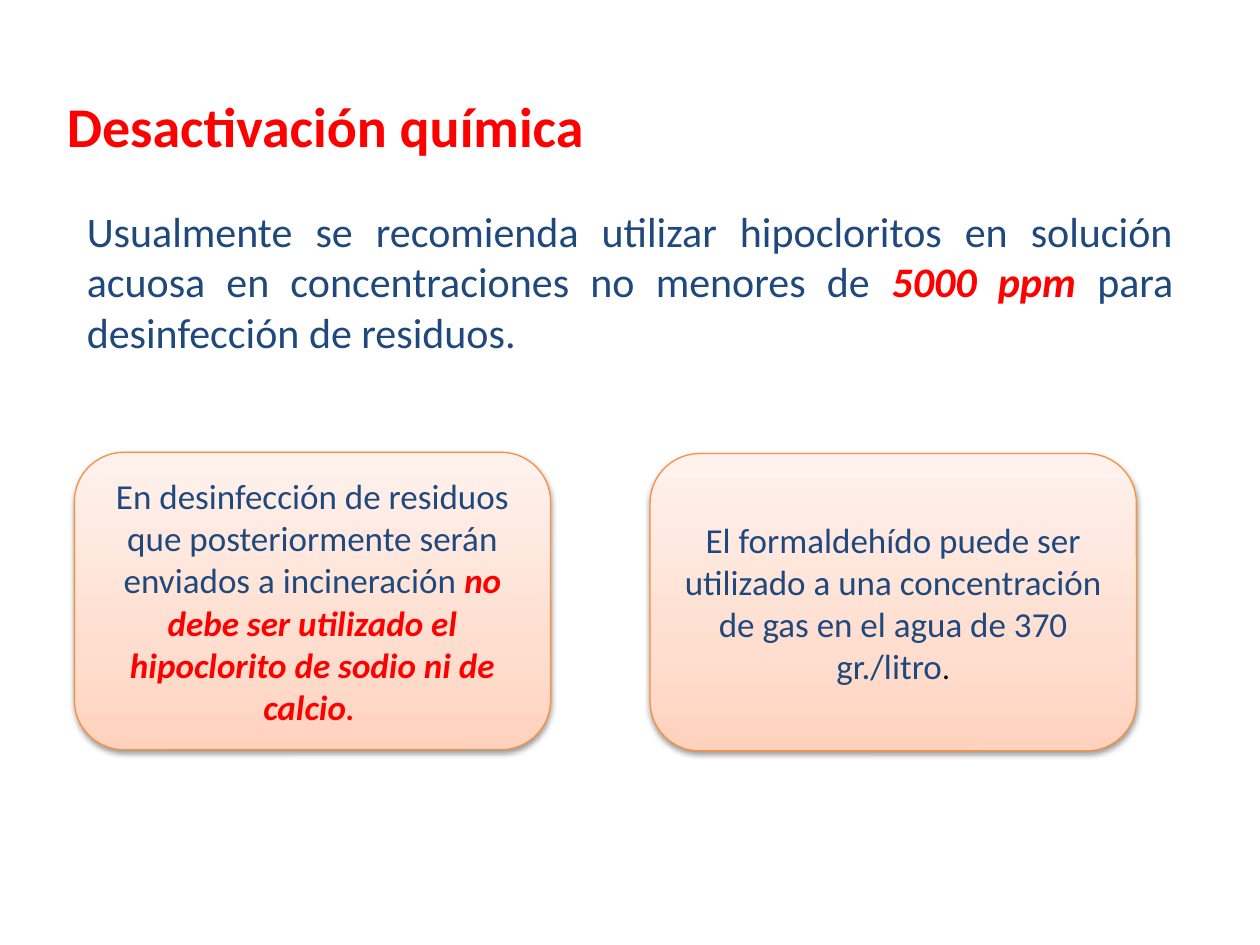
from copy import deepcopy
from dataclasses import dataclass

from lxml.etree import SubElement
from pptx import Presentation
from pptx.dml.color import RGBColor
from pptx.enum.shapes import MSO_SHAPE
from pptx.enum.text import MSO_ANCHOR as Anchor, MSO_AUTO_SIZE as AutoSize, PP_ALIGN as Align
from pptx.oxml.ns import qn
from pptx.util import Pt

PX = 9144


@dataclass(frozen=True)
class Theme:
    font: str = "Calibri"
    navy: str = "1F497D"
    red: str = "FF0000"
    black: str = "000000"
    border: str = "F69240"
    gradient: tuple = ((0, "FFD2BD"), (0.35, "FFDED0"), (1, "FFF2ED"))
    title_size: int = 32
    body_size: int = 24
    card_size: int = 20
    stop_size: int = 18


THEME = Theme()


@dataclass(frozen=True)
class Span:
    text: str
    size: int
    color: str = THEME.navy
    bold: bool = False
    italic: bool = False


@dataclass(frozen=True)
class Box:
    left: int
    top: int
    width: int
    height: int

    def emu(self) -> tuple:
        return tuple(side * PX for side in (self.left, self.top, self.width, self.height))


@dataclass(frozen=True)
class Card:
    box: Box
    spans: tuple


TITLE = Span("Desactivación química", THEME.title_size, THEME.red, bold=True)
BODY = (
    Span("Usualmente se recomienda utilizar hipocloritos en solución acuosa "
         "en concentraciones no menores de ", THEME.body_size),
    Span("5000 ppm ", THEME.body_size, THEME.red, bold=True, italic=True),
    Span("para desinfección de residuos. ", THEME.body_size),
)
CARDS = (
    Card(Box(59, 359, 378, 236), (
        Span("En desinfección de residuos que posteriormente serán enviados a incineración ",
             THEME.card_size),
        Span("no debe ser utilizado el hipoclorito de sodio ni de calcio",
             THEME.card_size, THEME.red, bold=True, italic=True),
        Span(". ", THEME.stop_size, THEME.red, bold=True, italic=True),
    )),
    Card(Box(516, 360, 386, 236), (
        Span("El formaldehído puede ser utilizado a una concentración de gas "
             "en el agua de 370 gr./litro", THEME.card_size),
        Span(".", THEME.stop_size, THEME.black),
    )),
)


def write(shape, spans: tuple, align: Align, anchor: Anchor) -> None:
    frame = shape.text_frame
    frame.word_wrap = True
    frame.vertical_anchor = anchor
    paragraph = frame.paragraphs[0]
    paragraph.alignment = align
    for span in spans:
        run = paragraph.add_run()
        run.text = span.text
        font = run.font
        font.name, font.size = THEME.font, Pt(span.size)
        font.bold, font.italic = span.bold, span.italic
        font.color.rgb = RGBColor.from_string(span.color)


def fill_gradient(shape) -> None:
    shape.fill.gradient()
    shape.fill.gradient_angle = 90
    stop_list = shape.fill._fill._gradFill.find(qn("a:gsLst"))
    stop_list.append(deepcopy(stop_list[0]))
    for stop, (position, color) in zip(shape.fill.gradient_stops, THEME.gradient):
        stop.position = position
        stop.color.rgb = RGBColor.from_string(color)


def add_shadow(shape) -> None:
    shape.shadow.inherit = False
    effects = shape._element.spPr.find(qn("a:effectLst"))
    shadow = SubElement(effects, qn("a:outerShdw"), blurRad="40000", dist="20000",
                        dir="5400000", rotWithShape="0")
    color = SubElement(shadow, qn("a:srgbClr"), val=THEME.black)
    SubElement(color, qn("a:alpha"), val="38000")


def add_title(slide, box: Box) -> None:
    title = slide.shapes.title
    title.left, title.top, title.width, title.height = box.emu()
    write(title, (TITLE,), Align.LEFT, Anchor.TOP)
    title.text_frame.auto_size = AutoSize.SHAPE_TO_FIT_TEXT


def add_body(slide, box: Box) -> None:
    body = slide.shapes.add_textbox(*box.emu())
    write(body, BODY, Align.JUSTIFY, Anchor.TOP)
    body.text_frame.auto_size = AutoSize.SHAPE_TO_FIT_TEXT


def add_card(slide, card: Card) -> None:
    shape = slide.shapes.add_shape(MSO_SHAPE.ROUNDED_RECTANGLE, *card.box.emu())
    fill_gradient(shape)
    shape.line.color.rgb = RGBColor.from_string(THEME.border)
    shape.line.width = Pt(0.75)
    add_shadow(shape)
    write(shape, card.spans, Align.CENTER, Anchor.MIDDLE)


def main() -> None:
    presentation = Presentation()
    presentation.slide_width, presentation.slide_height = 1000 * PX, 750 * PX
    slide = presentation.slides.add_slide(presentation.slide_layouts[5])
    add_title(slide, Box(43, 68, 829, 64))
    add_body(slide, Box(59, 158, 882, 131))
    for card in CARDS:
        add_card(slide, card)
    presentation.save("out.pptx")


if __name__ == "__main__":
    main()
